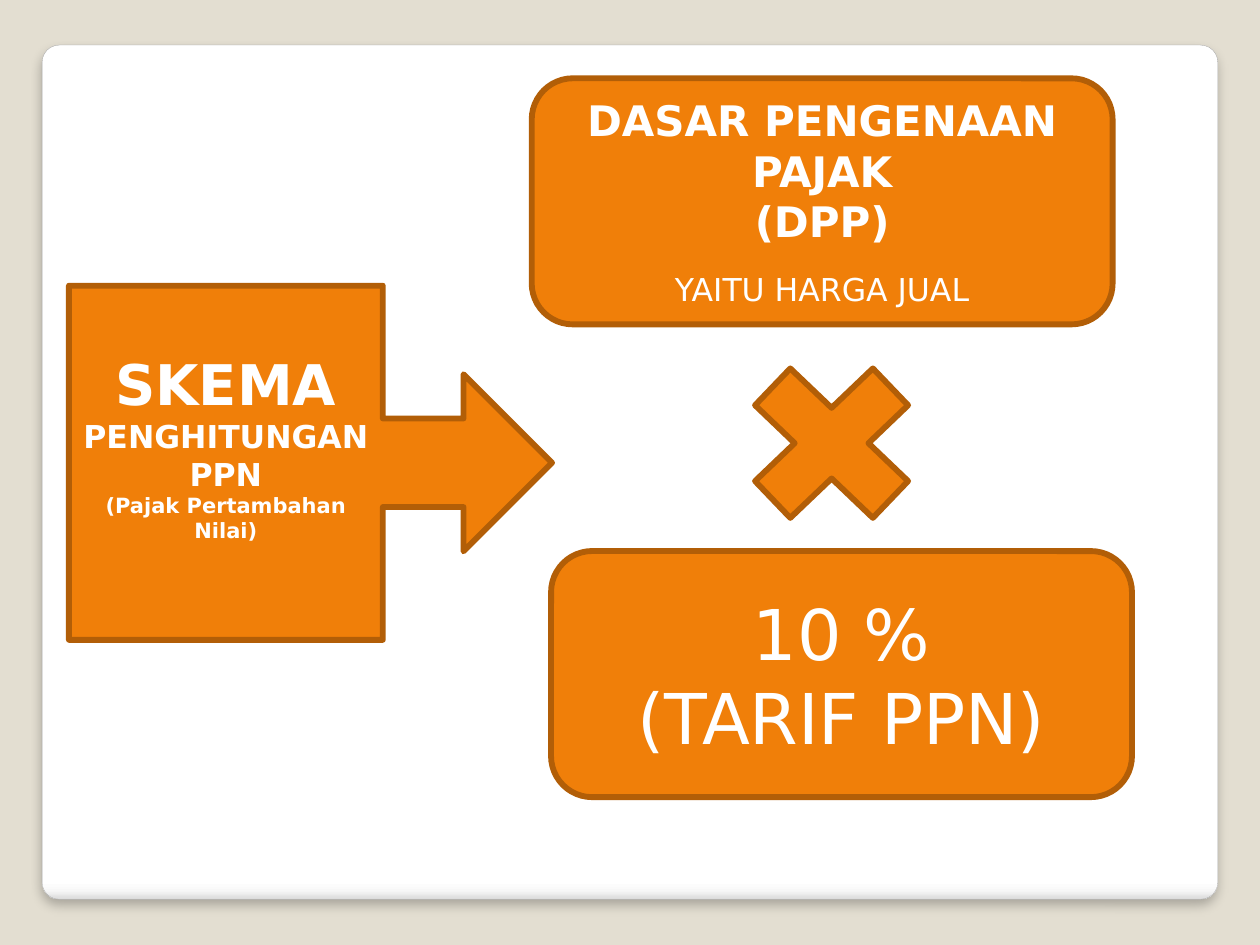
"""Build the slide showing how PPN (value added tax) is calculated."""
from lxml import etree
from pptx import Presentation
from pptx.dml.color import RGBColor
from pptx.enum.shapes import MSO_SHAPE
from pptx.enum.text import MSO_ANCHOR, PP_ALIGN
from pptx.oxml import parse_xml
from pptx.oxml.ns import nsdecls, qn
from pptx.util import Cm, Pt

ROUNDED = MSO_SHAPE.ROUNDED_RECTANGLE
CALLOUT = MSO_SHAPE.RIGHT_ARROW_CALLOUT
MULTIPLY = MSO_SHAPE.MATH_MULTIPLY
MIDDLE = MSO_ANCHOR.MIDDLE
CENTER = PP_ALIGN.CENTER

BEIGE = RGBColor(0xE3, 0xDE, 0xD1)
GRAY = RGBColor(0xA4, 0xA4, 0xA4)
ORANGE = RGBColor(0xF0, 0x7F, 0x09)
BROWN = RGBColor(0xB2, 0x5E, 0x07)
WHITE = RGBColor(0xFF, 0xFF, 0xFF)
FONT = "DejaVu Sans"
PANEL_STOPS = [(0, "FFFFFF"), (98, "FFFFFF"), (99, "F7F7F7"), (100, "DADADA")]


def add_box(page, kind, left, top, width, height, lines=()):
    """Add an orange shape; each line is text, size, bold and space before."""
    box = page.shapes.add_shape(kind, Cm(left), Cm(top), Cm(width), Cm(height))
    box.shadow.inherit = False
    box.fill.solid()
    box.fill.fore_color.rgb = ORANGE
    box.line.color.rgb = BROWN
    box.line.width = Pt(3.35)
    frame = box.text_frame
    frame.word_wrap = True
    frame.vertical_anchor = MIDDLE
    for index, (text, size, bold, gap) in enumerate(lines):
        para = frame.add_paragraph() if index else frame.paragraphs[0]
        para.alignment = CENTER
        para.space_before = Pt(gap)
        span = para.add_run()
        span.text = text
        span.font.name = FONT
        span.font.size = Pt(size)
        span.font.bold = bold
        span.font.color.rgb = WHITE
    return box


deck = Presentation()
deck.slide_width, deck.slide_height = Cm(25.4), Cm(19.05)
page = deck.slides.add_slide(deck.slide_layouts[6])
page.background.fill.solid()
page.background.fill.fore_color.rgb = BEIGE

panel = page.shapes.add_shape(ROUNDED, Cm(0.85), Cm(0.91), Cm(23.7), Cm(17.22))
panel.adjustments[0] = 0.02
panel.line.color.rgb = GRAY
panel.line.width = Pt(0.16)
panel.fill.gradient()
panel.fill.gradient_angle = 270
stops = panel.element.spPr.find(".//" + qn("a:gsLst"))
stops.clear()
for position, color in PANEL_STOPS:
    stop = etree.SubElement(stops, qn("a:gs"), pos=str(position * 1000))
    etree.SubElement(stop, qn("a:srgbClr"), val=color)
panel.shadow.inherit = False
panel.element.spPr.find(qn("a:effectLst")).append(parse_xml(
    f'<a:outerShdw {nsdecls("a")} blurRad="{Pt(6)}" dist="{Pt(4)}" dir="5400000" '
    'algn="t" rotWithShape="0"><a:srgbClr val="000000"><a:alpha val="25000"/>'
    '</a:srgbClr></a:outerShdw>'))

scheme = add_box(page, CALLOUT, 1.39, 5.76, 9.74, 7.14, [
    ("SKEMA", 32, True, 0),
    ("PENGHITUNGAN PPN", 18, True, 0),
    ("(Pajak Pertambahan Nilai)", 12, True, 0),
])
scheme.text_frame.margin_bottom = Cm(0.79)

add_box(page, ROUNDED, 10.72, 1.58, 11.71, 4.96, [
    ("DASAR PENGENAAN PAJAK", 24, True, 0),
    ("(DPP)", 24, True, 0),
    ("YAITU HARGA JUAL", 18, False, 14),
])
add_box(page, ROUNDED, 11.11, 11.11, 11.71, 4.96, [
    ("10 %", 40, False, 0),
    ("(TARIF PPN)", 40, False, 0),
])
add_box(page, MULTIPLY, 14.48, 6.75, 4.57, 4.37)

deck.save("out.pptx")
